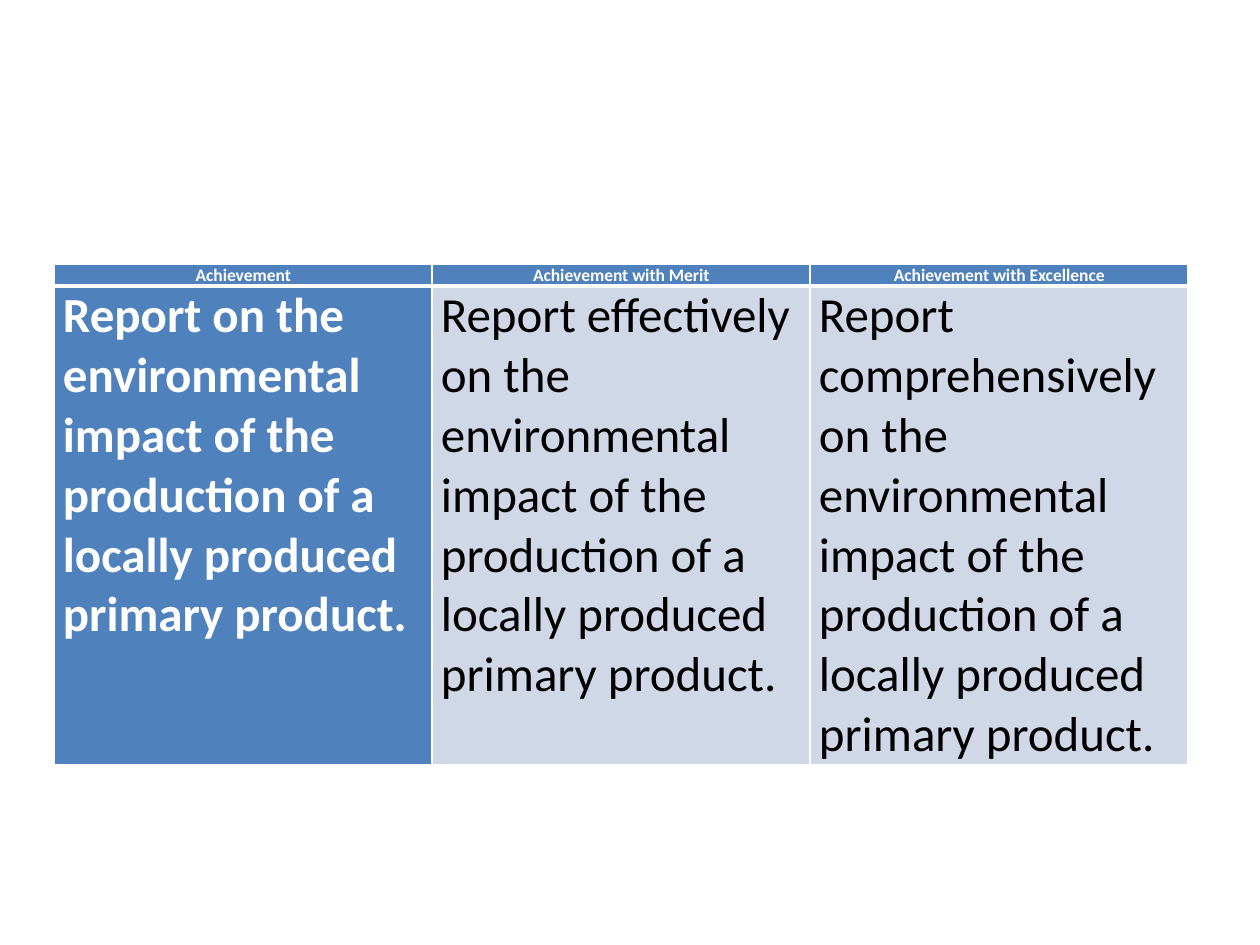
import lxml.etree
import pptx
import pptx.dml.color
import pptx.enum.text
import pptx.oxml.ns
import pptx.util

Inches = pptx.util.Inches
Pt = pptx.util.Pt
RGBColor = pptx.dml.color.RGBColor
ALIGN = pptx.enum.text.PP_ALIGN

WHITE = RGBColor(0xFF, 0xFF, 0xFF)
BLACK = RGBColor(0x00, 0x00, 0x00)
BLUE = RGBColor(0x4F, 0x81, 0xBD)
PALE_BLUE = RGBColor(0xD0, 0xD8, 0xE8)

GRADES = ["Achievement", "Achievement with Merit", "Achievement with Excellence"]
IMPACT = "on the environmental impact of the production of a locally produced primary product."
CRITERIA = [f"{verb} {IMPACT}" for verb in
            ("Report", "Report effectively", "Report comprehensively")]


def set_borders(cell, bottom_width):
    """Draw white borders, 1 point wide except at the bottom."""
    properties = cell._tc.get_or_add_tcPr()
    widths = {"a:lnL": 1, "a:lnR": 1, "a:lnT": 1, "a:lnB": bottom_width}
    for position, (tag, width) in enumerate(widths.items()):
        line = lxml.etree.Element(pptx.oxml.ns.qn(tag), w=str(Pt(width)))
        fill = lxml.etree.SubElement(line, pptx.oxml.ns.qn("a:solidFill"))
        lxml.etree.SubElement(fill, pptx.oxml.ns.qn("a:srgbClr"), val=str(WHITE))
        properties.insert(position, line)


def fill_cell(cell, text, size, fill, color, bold, align, before, after, bottom_width):
    cell.margin_left = cell.margin_right = Inches(0.07)
    cell.margin_top = cell.margin_bottom = 0
    cell.fill.solid()
    cell.fill.fore_color.rgb = fill
    set_borders(cell, bottom_width)
    cell.text_frame.text = text
    para = cell.text_frame.paragraphs[0]
    para.alignment = align
    para.space_before, para.space_after = Pt(before), Pt(after)
    font = para.runs[0].font
    font.name, font.size, font.bold = "Calibri", Pt(size), bold
    font.color.rgb = color


def add_criteria_table(slide):
    frame = slide.shapes.add_table(2, len(GRADES), Inches(0.43), Inches(2.1),
                                   Inches(9), Inches(3.96))
    table = frame.table
    table.rows[0].height = Inches(0.16)
    table.rows[1].height = Inches(3.8)
    for index, (grade, criterion) in enumerate(zip(GRADES, CRITERIA)):
        fill_cell(table.cell(0, index), grade, 10, BLUE, WHITE, True,
                  ALIGN.CENTER, 3, 3, bottom_width=3)
        is_first = index == 0
        fill_cell(table.cell(1, index), criterion, 28,
                  BLUE if is_first else PALE_BLUE, WHITE if is_first else BLACK,
                  is_first, ALIGN.LEFT, 2, 6, bottom_width=1)
        if is_first:
            table.first_col = True


def main():
    deck = pptx.Presentation()
    deck.slide_width, deck.slide_height = Inches(10), Inches(7.5)
    slide = deck.slides.add_slide(deck.slide_layouts[6])
    add_criteria_table(slide)
    deck.save("out.pptx")


if __name__ == "__main__":
    main()
